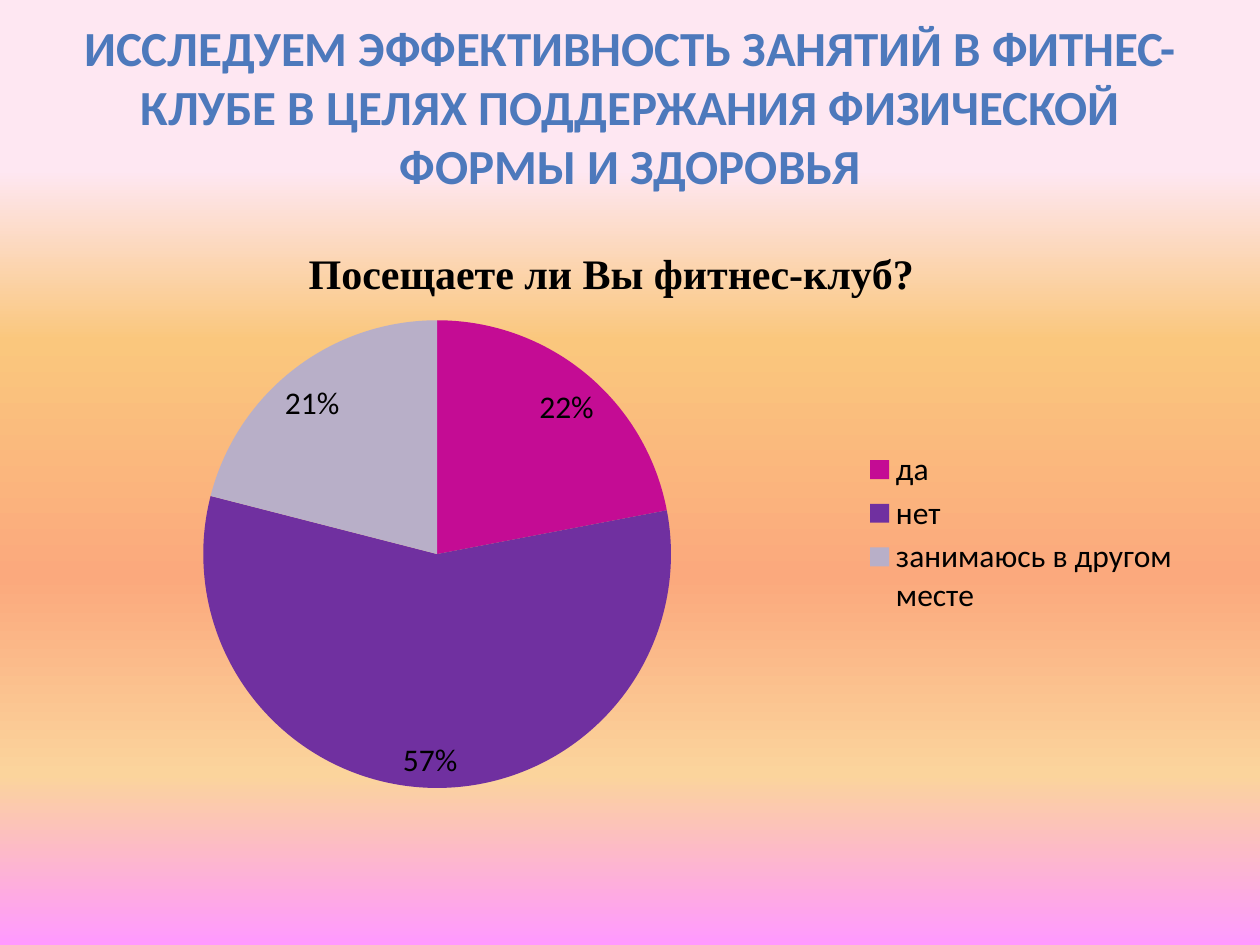
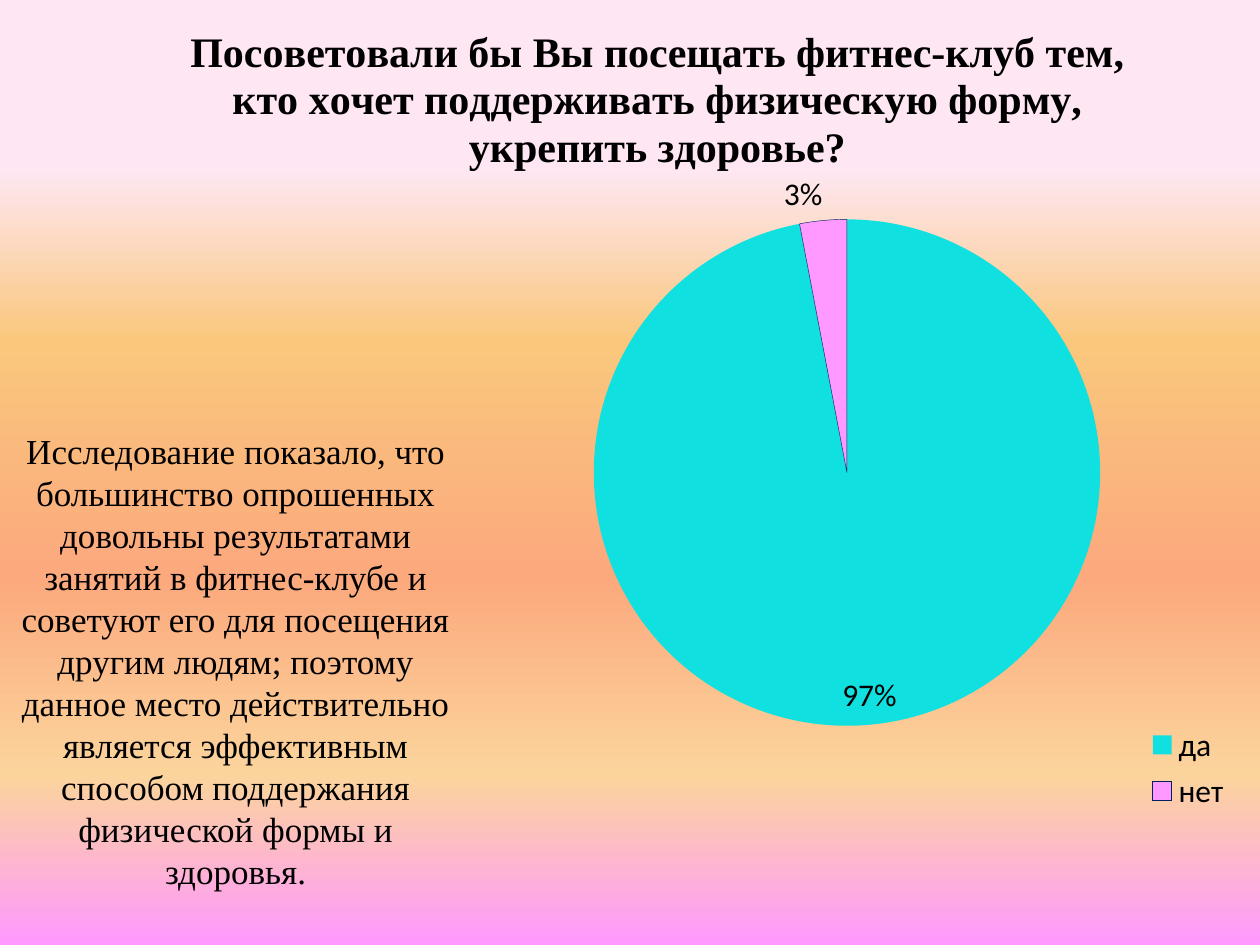
from dataclasses import dataclass

import pptx
import pptx.chart.data
import pptx.dml.color
import pptx.enum.chart
import pptx.enum.text
import pptx.oxml
import pptx.oxml.ns
import pptx.util
from lxml import etree

RGBColor = pptx.dml.color.RGBColor
EMU_PER_PX = 9144

BLACK = RGBColor(0x00, 0x00, 0x00)
TITLE_BLUE = RGBColor(0x4D, 0x79, 0xBC)
MAGENTA = RGBColor(0xC4, 0x0C, 0x94)
PURPLE = RGBColor(0x70, 0x30, 0xA0)
LILAC = RGBColor(0xB8, 0xAF, 0xC8)
CYAN = RGBColor(0x10, 0xE0, 0xE0)
PINK = RGBColor(0xFF, 0x99, 0xFF)
NAVY = RGBColor(0x00, 0x20, 0x60)
SKY_STOPS = (
    (18, RGBColor(0xFE, 0xE7, 0xF2)),
    (36, RGBColor(0xFA, 0xC7, 0x7D)),
    (61, RGBColor(0xFB, 0xA9, 0x7D)),
    (82, RGBColor(0xFB, 0xD4, 0x9C)),
    (100, PINK),
)

SANS = "Calibri"
SERIF = "Times New Roman"


@dataclass(frozen=True)
class Frame:
    left: int
    top: int
    width: int
    height: int

    def emu(self) -> list:
        return [px(v) for v in (self.left, self.top, self.width, self.height)]


@dataclass(frozen=True)
class TextStyle:
    name: str
    size: int
    color: RGBColor = BLACK
    bold: bool = False


@dataclass(frozen=True)
class Answer:
    label: str
    percent: int
    color: RGBColor
    outline: RGBColor | None = None


@dataclass(frozen=True)
class Survey:
    frame: Frame
    question: str
    answers: tuple
    title_layout: dict
    plot_layout: dict
    legend_layout: dict


HEADING = TextStyle(SANS, 28, TITLE_BLUE, True)
QUESTION = TextStyle(SERIF, 24, BLACK, True)
CONCLUSION = TextStyle(SERIF, 20)
CHART_TEXT = TextStyle(SANS, 18)

ATTENDANCE = Survey(
    Frame(50, 175, 900, 495),
    "Посещаете ли Вы фитнес-клуб?",
    (
        Answer("да", 22, MAGENTA),
        Answer("нет", 57, PURPLE),
        Answer("занимаюсь в другом месте", 21, LILAC),
    ),
    {"x": 0.21, "y": 0.03},
    {"x": 0.04, "y": 0.16, "w": 0.58, "h": 0.75},
    {"x": 0.7, "y": 0.36, "w": 0.29, "h": 0.28},
)
ADVICE = Survey(
    Frame(50, 0, 950, 670),
    "Посоветовали бы Вы посещать фитнес-клуб тем, кто хочет "
    "поддерживать физическую форму, укрепить здоровье?",
    (Answer("да", 97, CYAN), Answer("нет", 3, PINK, NAVY)),
    {"x": 0.1, "y": 0.02},
    {"x": 0.31, "y": 0.26, "w": 0.69, "h": 0.6},
    {"x": 0.89, "y": 0.85, "w": 0.1, "h": 0.12},
)


def px(length: int) -> pptx.util.Emu:
    return pptx.util.Emu(length * EMU_PER_PX)


def assign(target, values: dict) -> None:
    for name, value in values.items():
        setattr(target, name, value)


def style_font(font, style: TextStyle) -> None:
    assign(font, {
        "name": style.name,
        "size": pptx.util.Pt(style.size),
        "bold": style.bold,
    })
    font.color.rgb = style.color


def paint_background(page) -> None:
    fill = page.background.fill
    fill.gradient()
    fill.gradient_angle = 270
    stops = next(page.element.iter(pptx.oxml.ns.qn("a:gsLst")))
    for stop in list(stops):
        stops.remove(stop)
    for position, color in SKY_STOPS:
        stop = etree.SubElement(
            stops, pptx.oxml.ns.qn("a:gs"), pos=str(position * 1000))
        etree.SubElement(stop, pptx.oxml.ns.qn("a:srgbClr"), val=str(color))


def add_page(deck):
    page = deck.slides.add_slide(deck.slide_layouts[6])
    paint_background(page)
    return page


def add_text(page, frame: Frame, text: str, style: TextStyle) -> None:
    box = page.shapes.add_textbox(*frame.emu())
    assign(box.text_frame, {
        "word_wrap": True,
        "vertical_anchor": pptx.enum.text.MSO_ANCHOR.MIDDLE,
    })
    para = box.text_frame.paragraphs[0]
    para.alignment = pptx.enum.text.PP_ALIGN.CENTER
    span = para.add_run()
    span.text = text
    style_font(span.font, style)


def place(element, layout: dict, inner: bool = False) -> None:
    qn = pptx.oxml.ns.qn
    for old in element.findall(qn("c:layout")):
        element.remove(old)
    holder = etree.Element(qn("c:layout"))
    manual = etree.SubElement(holder, qn("c:manualLayout"))
    if inner:
        etree.SubElement(manual, qn("c:layoutTarget"), val="inner")
    for axis in ("x", "y"):
        etree.SubElement(manual, qn(f"c:{axis}Mode"), val="edge")
    for name, value in layout.items():
        etree.SubElement(manual, qn(f"c:{name}"), val=str(value))
    leading = [child for child in element
               if child.tag in (qn("c:tx"), qn("c:legendPos"))]
    element.insert(len(leading), holder)


def add_survey(page, survey: Survey) -> None:
    data = pptx.chart.data.CategoryChartData()
    data.categories = [answer.label for answer in survey.answers]
    data.add_series(
        survey.question, [answer.percent for answer in survey.answers])
    chart = page.shapes.add_chart(
        pptx.enum.chart.XL_CHART_TYPE.PIE, *survey.frame.emu(), data).chart
    style_font(chart.font, CHART_TEXT)

    chart.has_title = True
    title = chart.chart_title
    title.include_in_layout = False
    title.text_frame.text = survey.question
    style_font(title.text_frame.paragraphs[0].runs[0].font, QUESTION)

    chart.has_legend = True
    assign(chart.legend, {
        "position": pptx.enum.chart.XL_LEGEND_POSITION.RIGHT,
        "include_in_layout": False,
    })

    plot = chart.plots[0]
    assign(plot, {"vary_by_categories": True, "has_data_labels": True})
    assign(plot.data_labels, {
        "show_percentage": True,
        "show_value": False,
        "number_format": "0%",
        "number_format_is_linked": False,
        "position": pptx.enum.chart.XL_LABEL_POSITION.BEST_FIT,
    })
    style_font(plot.data_labels.font, CHART_TEXT)

    for index, answer in enumerate(survey.answers):
        wedge = plot.series[0].points[index].format
        wedge.fill.solid()
        wedge.fill.fore_color.rgb = answer.color
        if answer.outline is None:
            wedge.line.fill.background()
        else:
            wedge.line.color.rgb = answer.outline
            wedge.line.width = pptx.util.Pt(0.25)

    area = next(chart.element.iter(pptx.oxml.ns.qn("c:plotArea")))
    legend = next(chart.element.iter(pptx.oxml.ns.qn("c:legend")))
    heading = next(chart.element.iter(pptx.oxml.ns.qn("c:title")))
    place(area, survey.plot_layout, inner=True)
    place(legend, survey.legend_layout)
    place(heading, survey.title_layout)


def main() -> None:
    deck = pptx.Presentation()
    assign(deck, {"slide_width": px(1000), "slide_height": px(750)})

    page = add_page(deck)
    add_text(
        page, Frame(50, 13, 900, 142),
        "ИССЛЕДУЕМ ЭФФЕКТИВНОСТЬ ЗАНЯТИЙ В ФИТНЕС-КЛУБЕ В ЦЕЛЯХ "
        "ПОДДЕРЖАНИЯ ФИЗИЧЕСКОЙ ФОРМЫ И ЗДОРОВЬЯ", HEADING)
    add_survey(page, ATTENDANCE)

    page = add_page(deck)
    add_survey(page, ADVICE)
    add_text(
        page, Frame(0, 328, 374, 393),
        "Исследование показало, что большинство опрошенных довольны "
        "результатами занятий в фитнес-клубе и советуют его для посещения "
        "другим людям; поэтому данное место действительно является "
        "эффективным способом поддержания физической формы и здоровья.",
        CONCLUSION)

    deck.save("out.pptx")


if __name__ == "__main__":
    main()
